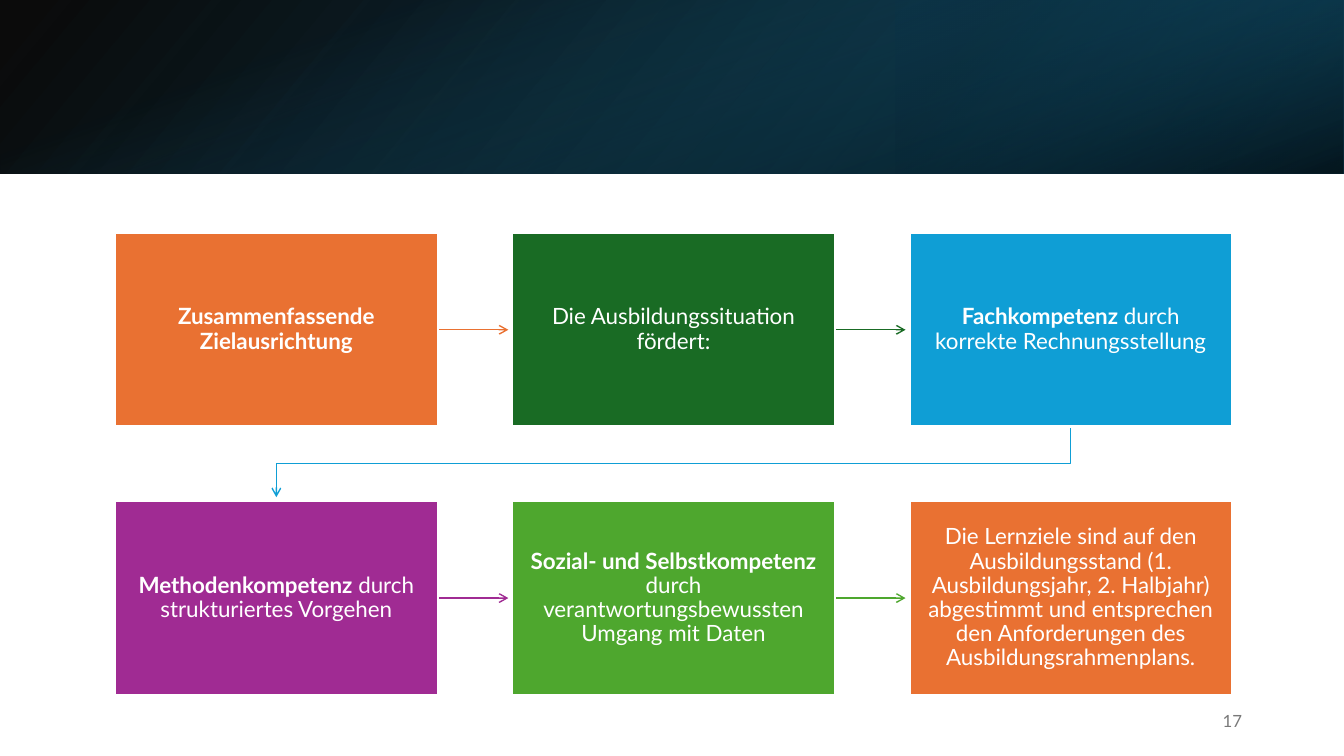
from lxml import etree
from pptx import Presentation
from pptx import util as u
from pptx.dml.color import RGBColor
from pptx.enum import shapes, text
from pptx.oxml import ns

Cm, Pt = u.Cm, u.Pt
WIDE, HIGH = 33.87, 19.05
FONT = "Lato"
COLORS = {
    "white": "FFFFFF", "black": "000000", "gray": "797979",
    "navy": "104862", "deep": "0B3041", "teal": "156082",
    "orange": "E97132", "green": "196B24", "blue": "0F9ED5",
    "purple": "A02B93", "lime": "4EA72E",
}

# Fill and runs of each step, in reading order; True marks bold
STEPS = [
    ("orange", [("Zusammenfassende Zielausrichtung", True)]),
    ("green", [("Die Ausbildungssituation fördert:", False)]),
    ("blue", [("Fachkompetenz", True),
              (" durch korrekte Rechnungsstellung", False)]),
    ("purple", [("Methodenkompetenz", True),
                (" durch strukturiertes Vorgehen", False)]),
    ("lime", [("Sozial- und Selbstkompetenz", True),
              (" durch verantwortungsbewussten Umgang mit Daten", False)]),
    ("orange", [("Die Lernziele sind auf den Ausbildungsstand "
                 "(1. Ausbildungsjahr, 2. Halbjahr) abgestimmt und "
                 "entsprechen den Anforderungen des "
                 "Ausbildungsrahmenplans.", False)]),
]


def color(name):
    return RGBColor.from_string(COLORS[name])


def write(frame, runs, size, tone, align):
    frame.word_wrap = True
    frame.vertical_anchor = text.MSO_ANCHOR.MIDDLE
    para = frame.paragraphs[0]
    para.alignment = align
    for words, bold in runs:
        run = para.add_run()
        run.text = words
        font = run.font
        font.name, font.size, font.bold = FONT, Pt(size), bold
        font.color.rgb = color(tone)
    return para


def rect(slide, x, y, w, h):
    box = slide.shapes.add_shape(
        shapes.MSO_SHAPE.RECTANGLE, Cm(x), Cm(y), Cm(w), Cm(h))
    box.shadow.inherit = False
    return box


def shade(box, stops, angle, flip):
    """Gradient fill; each stop is position, color and opacity in percent."""
    box.line.fill.background()
    box.fill.gradient()
    box.fill.gradient_angle = 360 - angle
    for stop, (pos, name, alpha) in zip(box.fill.gradient_stops, stops):
        stop.position = pos / 100
        stop.color.rgb = color(name)
    props = box.element.spPr
    tints = props.findall(".//" + ns.qn("a:gs") + "/" + ns.qn("a:srgbClr"))
    for tint, (pos, name, alpha) in zip(tints, stops):
        etree.SubElement(tint, ns.qn("a:alpha"), val=str(alpha * 1000))
    if flip:
        props.find(ns.qn("a:xfrm")).set("flipH", "1")


def banner(slide, x, y, w, h):
    # Base
    base = rect(slide, x, y, w, h)
    shade(base, [(0, "black", 96), (100, "navy", 100)], 140, True)
    # Glow over the right third
    glow = rect(slide, x + w * 2 / 3, y, w / 3, h)
    glow.rotation = 180
    shade(glow, [(19, "deep", 68), (100, "teal", 79)], 320, True)
    # Upright strip turned onto the banner
    veil = rect(slide, x + (w - h) / 2, y + (h - w) / 2, h, w)
    veil.rotation = 90
    shade(veil, [(23, "teal", 0), (99, "black", 74)], 340, False)


def tip(line, name):
    """Thin colored stroke with an open arrowhead at its end."""
    line.line.color.rgb = color(name)
    line.line.width = Pt(1)
    props = line.element.spPr
    etree.SubElement(props.find(ns.qn("a:ln")), ns.qn("a:tailEnd"), type="arrow")
    if props.find(ns.qn("a:effectLst")) is None:
        etree.SubElement(props, ns.qn("a:effectLst"))


def arrow(slide, x, y, size, name):
    line = slide.shapes.add_connector(
        shapes.MSO_CONNECTOR.STRAIGHT, Cm(x), Cm(y), Cm(x + size), Cm(y))
    tip(line, name)


def elbow(slide, start, end, name):
    (x1, y1), (x2, y2) = start, end
    mid = (y1 + y2) / 2 + 0.04
    pen = slide.shapes.build_freeform(Cm(x1), Cm(y1))
    pen.add_line_segments(
        [(Cm(x), Cm(y)) for x, y in [(x1, mid), (x2, mid), (x2, y2)]],
        close=False)
    line = pen.convert_to_shape()
    line.fill.background()
    line.shadow.inherit = False
    tip(line, name)


def step(slide, x, y, w, h, name, runs):
    box = rect(slide, x, y, w, h)
    box.fill.solid()
    box.fill.fore_color.rgb = color(name)
    box.line.color.rgb = color("white")
    box.line.width = Pt(1.5)
    frame = box.text_frame
    frame.margin_left = frame.margin_right = Cm(0.4)
    frame.margin_top = frame.margin_bottom = Cm(0.4)
    para = write(frame, runs, 16, "white", text.PP_ALIGN.CENTER)
    para.line_spacing = 0.9


def flow(slide, x, y, w, h):
    cols, wide, high, reach = 3, 8.13, 4.88, 1.78
    dx, dy = (w - wide) / (cols - 1), h - high
    for i, (name, runs) in enumerate(STEPS):
        row, col = divmod(i, cols)
        left, top = x + col * dx, y + row * dy
        # Link to the next step
        if col < cols - 1:
            arrow(slide, left + wide, top + high / 2, reach, name)
        elif i < len(STEPS) - 1:
            elbow(slide, (left + wide / 2, top + high),
                  (x + wide / 2, top + high + reach), name)
        step(slide, left, top, wide, high, name, runs)


def number(slide, x, y, w, h):
    box = slide.shapes.add_textbox(Cm(x), Cm(y), Cm(w), Cm(h))
    write(box.text_frame, [("17", False)], 12, "gray", text.PP_ALIGN.RIGHT)


def main():
    deck = Presentation()
    deck.slide_width, deck.slide_height = Cm(WIDE), Cm(HIGH)
    slide = deck.slides.add_slide(deck.slide_layouts[6])
    banner(slide, 0, 0, WIDE, 4.37)
    flow(slide, 2.9, 5.87, 28.15, 11.64)
    number(slide, 23.93, 17.65, 7.62, 1.02)
    deck.save("out.pptx")


if __name__ == "__main__":
    main()
